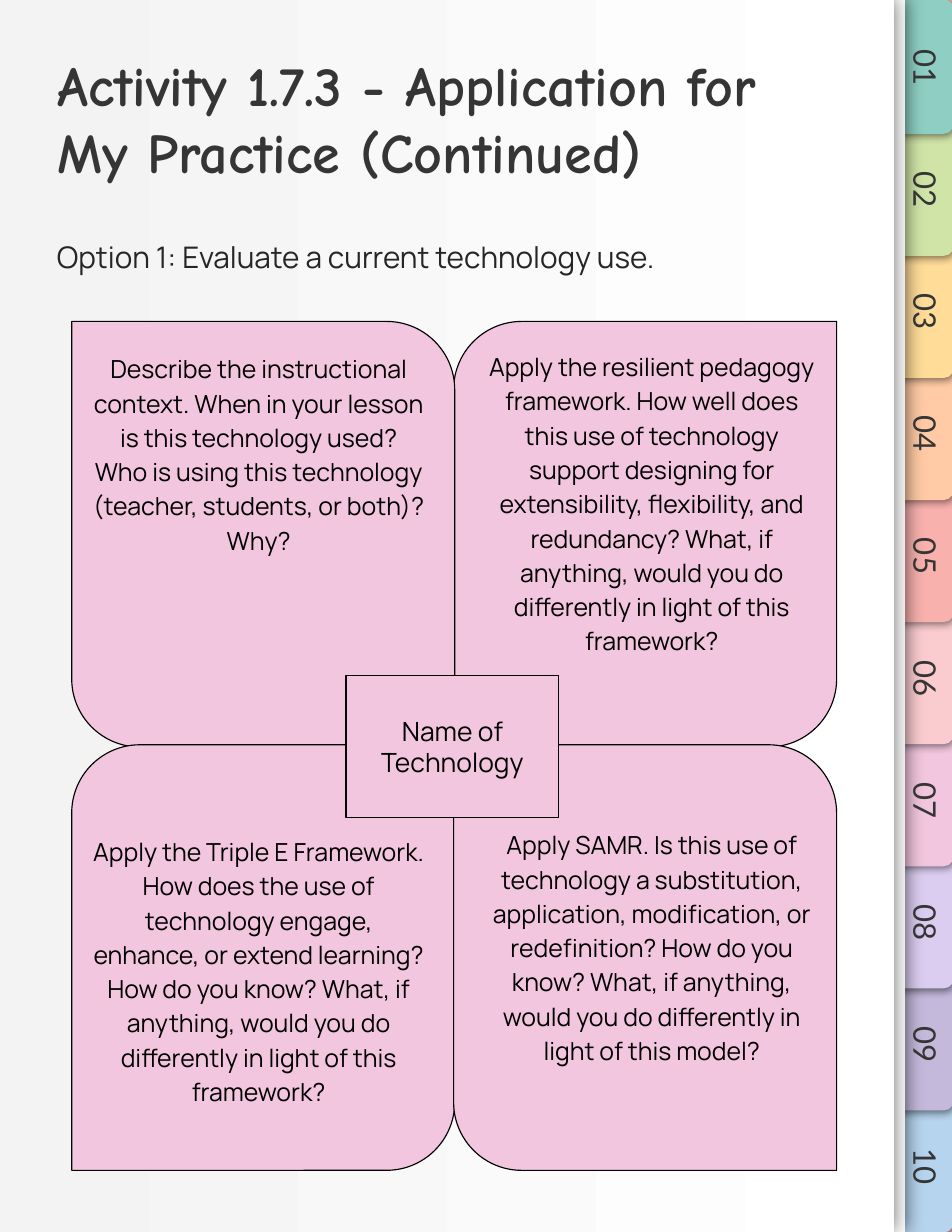
from lxml import etree
from pptx import Presentation
from pptx.dml.color import RGBColor
from pptx.enum.shapes import MSO_SHAPE
from pptx.enum.text import MSO_ANCHOR, PP_ALIGN
from pptx.oxml.ns import qn
from pptx.util import Inches, Pt

RECT, TAB, PETAL = (MSO_SHAPE.RECTANGLE, MSO_SHAPE.ROUND_2_SAME_RECTANGLE,
                    MSO_SHAPE.ROUND_2_DIAG_RECTANGLE)
TOP, MIDDLE, BOTTOM = MSO_ANCHOR.TOP, MSO_ANCHOR.MIDDLE, MSO_ANCHOR.BOTTOM
LEFT, CENTER = PP_ALIGN.LEFT, PP_ALIGN.CENTER
rgb = RGBColor.from_string
PINK, BLACK, DARK = "F2C6DE", "000000", "353535"


def write(sp, text, size, font="Manrope", color=BLACK, bold=False, align=CENTER,
          anchor=TOP, inset=0.08, spacing=1.0, after=0):
    tf = sp.text_frame
    tf.word_wrap = True
    tf.vertical_anchor = anchor
    tf.margin_left = tf.margin_right = tf.margin_top = tf.margin_bottom = Inches(inset)
    p = tf.paragraphs[0]
    p.alignment, p.line_spacing, p.space_after = align, spacing, Pt(after)
    r = p.add_run()
    r.text = text
    r.font.size, r.font.name, r.font.bold = Pt(size), font, bold
    r.font.color.rgb = rgb(color)


def add_shape(kind, box, fill, outlined=False, shadow=None):
    sp = slide.shapes.add_shape(kind, *map(Inches, box))
    sp.shadow.inherit = False
    sp.fill.solid()
    sp.fill.fore_color.rgb = rgb(fill)
    if outlined:
        sp.line.color.rgb = rgb(BLACK)
        sp.line.width = Pt(0.75)
    else:
        sp.line.fill.background()
    if shadow:
        blur, dist, angle = shadow
        effects = sp._element.spPr.find(qn("a:effectLst"))
        outer = etree.SubElement(effects, qn("a:outerShdw"), blurRad=str(Pt(blur)),
                                 dist=str(Pt(dist)), dir=str(angle * 60000),
                                 algn="bl", rotWithShape="0")
        clr = etree.SubElement(outer, qn("a:srgbClr"), val=BLACK)
        etree.SubElement(clr, qn("a:alpha"), val="50000")
    return sp


prs = Presentation()
prs.slide_width, prs.slide_height = Inches(8.5), Inches(11)
slide = prs.slides.add_slide(prs.slide_layouts[5])
slide.background.fill.solid()
slide.background.fill.fore_color.rgb = rgb("F8B1AD")

# Index tabs, lowest at the back
tab_colors = ["8FCEC3", "D0E4A7", "FFDC98", "FFCAA5", "F8B1AD",
              "FACCCF", PINK, "DBCDF0", "C4B9DB", "B6D4EE"]
tab_pitch = 1.09
for i, color in reversed(list(enumerate(tab_colors))):
    sp = add_shape(TAB, (7.65, 0.33 + i * tab_pitch, 1.2, 0.53), color,
                   shadow=(5.6, 1.5, 61))
    sp.adjustments[0], sp.adjustments[1] = 0.167, 0
    sp.rotation = 90

# Two sheets of paper, the front one with a gradient
page_shadow = (12.4, 0.8, 0)
add_shape(RECT, (0.1, 0, 7.98, 11), "FFFFFF", shadow=page_shadow)
sp = add_shape(RECT, (0, 0, 7.98, 11), "FFFFFF", shadow=page_shadow)
sp.fill.gradient()
sp.fill.gradient_angle = 0
for stop, position, color in zip(sp.fill.gradient_stops, (0, 1), ("F3F3F3", "FFFFFF")):
    stop.position = position
    stop.color.rgb = rgb(color)

# Tab numbers
for i in range(len(tab_colors)):
    sp = slide.shapes.add_textbox(Inches(7.73), Inches(0.29 + i * tab_pitch),
                                  Inches(1.17), Inches(0.63))
    sp.rotation = 90
    write(sp, f"{i + 1:02d}", 20, font="Lato", color=DARK, anchor=BOTTOM, inset=0.1)

# Title, brought in front of the paper
title = slide.shapes.title
slide.shapes._spTree.append(title._element)
title.left, title.top, title.width, title.height = map(Inches, (0.41, 0.35, 6.65, 1.26))
write(title, "Activity 1.7.3 - Application for My Practice (Continued)", 36,
      font="Comic Neue", color=DARK, bold=True, align=LEFT, inset=0.1)

# Four petals on a two by two grid: column, row, text top, text height, text
petals = [
    (1, 0, 3.02, 3.24, "Apply the resilient pedagogy framework. How well does this use of "
     "technology support designing for extensibility, flexibility, and redundancy? What, if "
     "anything, would you do differently in light of this framework?"),
    (0, 0, 3.04, 3.13, "Describe the instructional context. When in your lesson is this "
     "technology used? Who is using this technology (teacher, students, or both)? Why?"),
    (0, 1, 7.35, 2.07, "Apply the Triple E Framework. How does the use of technology engage, "
     "enhance, or extend learning? How do you know? What, if anything, would you do "
     "differently in light of this framework?"),
    (1, 1, 7.29, 1.97, "Apply SAMR. Is this use of technology a substitution, application, "
     "modification, or redefinition? How do you know? What, if anything, would you do "
     "differently in light of this model?"),
]
for col, row, top, height, text in petals:
    sp = add_shape(PETAL, (0.64 + col * 3.41, 2.87 + row * 3.78, 3.42, 3.8), PINK,
                   outlined=True)
    # The rounded diagonal alternates so that the petals mirror each other
    corners = (0, 0.178) if col == row else (0.178, 0)
    sp.adjustments[0], sp.adjustments[1] = corners
    sp = slide.shapes.add_textbox(Inches(0.74 + col * 3.51), Inches(top),
                                  Inches(3.14), Inches(height))
    write(sp, text, 16, spacing=1.15, after=14)

# Centre box
sp = add_shape(RECT, (3.09, 6.03, 1.9, 1.27), PINK, outlined=True)
write(sp, "Name of Technology", 17, anchor=MIDDLE)

# Subtitle
sp = slide.shapes.add_textbox(*map(Inches, (0.41, 1.98, 6.82, 0.52)))
write(sp, "Option 1: Evaluate a current technology use.", 19.1, color="262626",
      align=LEFT, inset=0.1, spacing=1.15)

prs.save("out.pptx")
